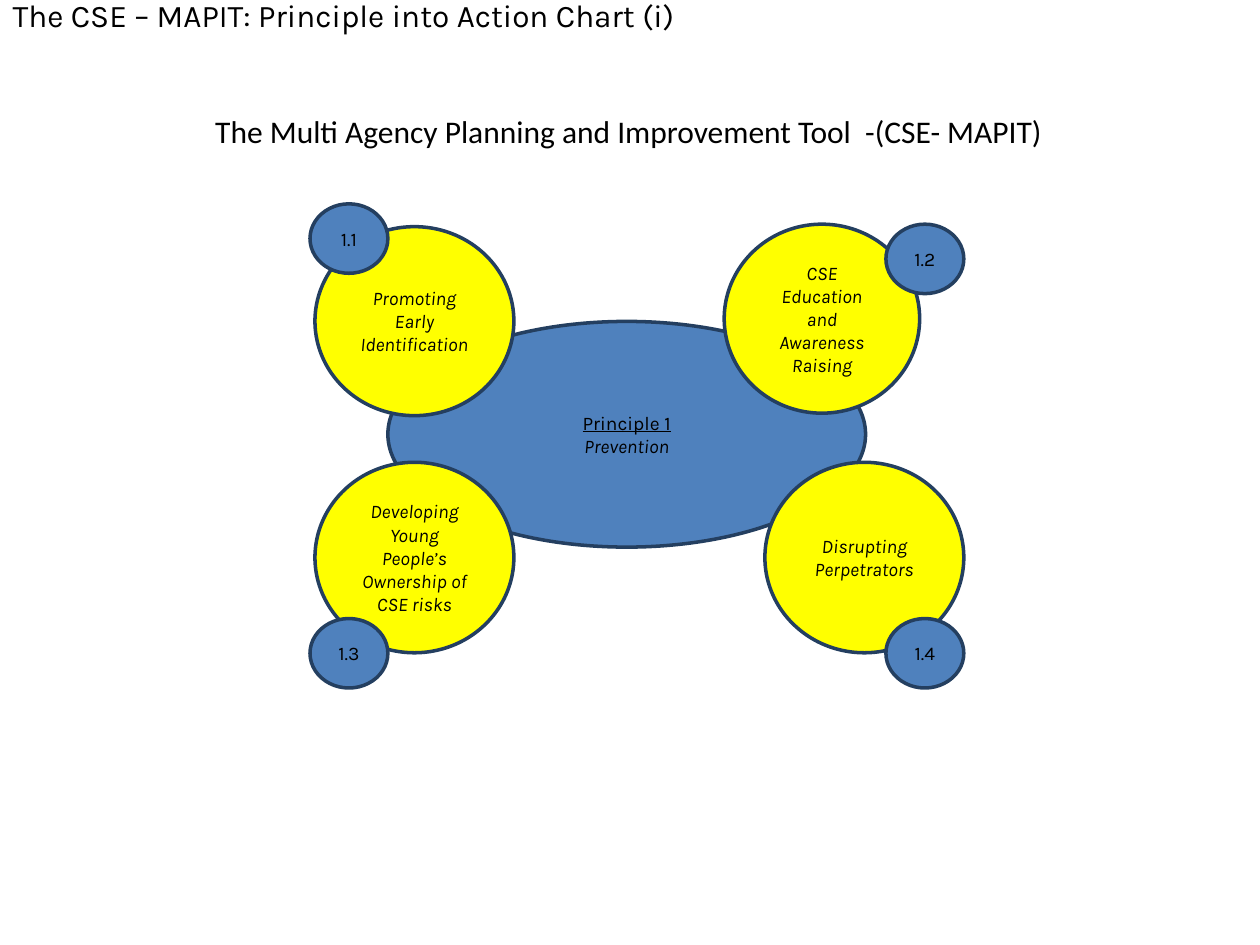
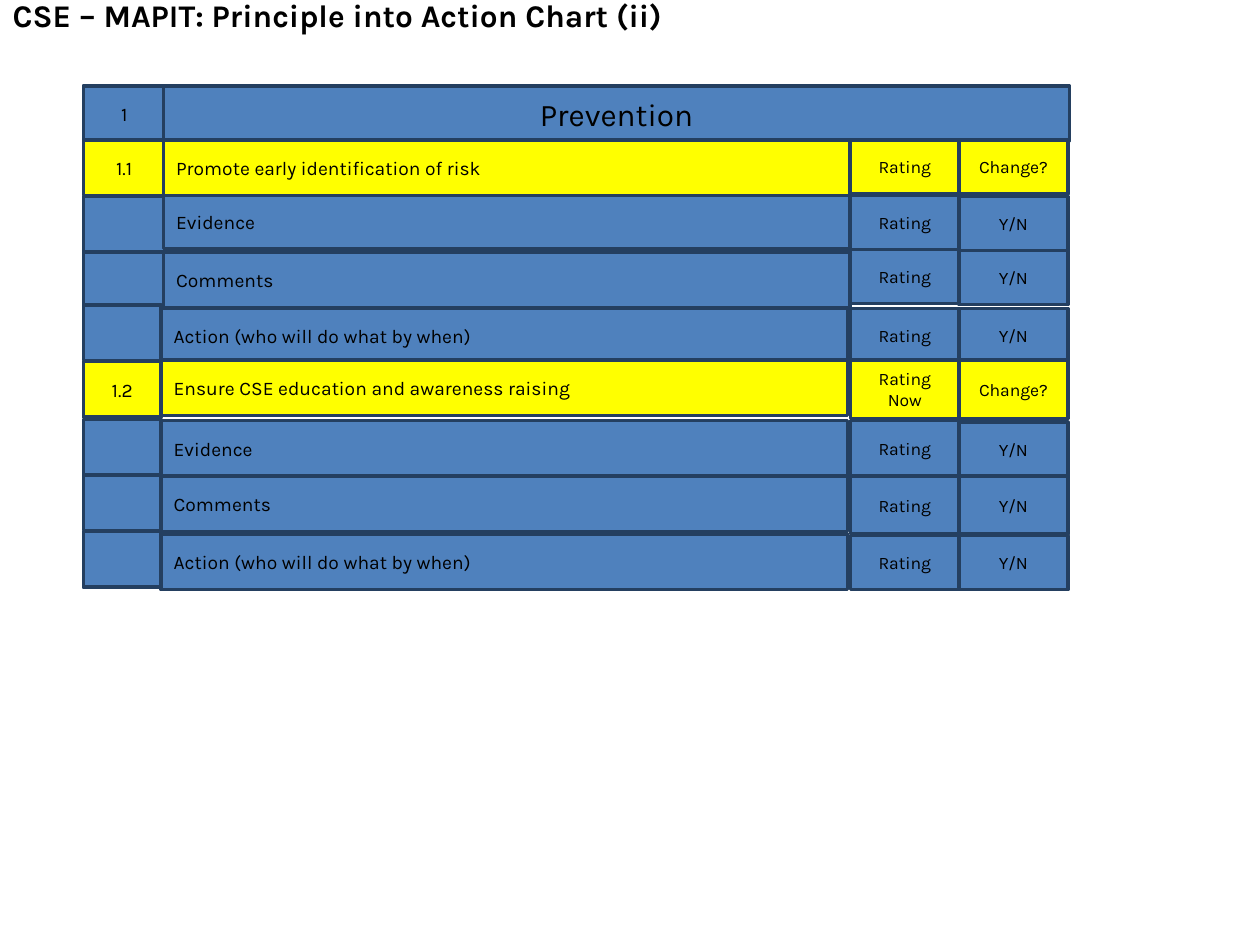
"""Builds the two Principle into Action chart slides."""
from pptx import Presentation
from pptx.dml.color import RGBColor
from pptx.enum.shapes import MSO_SHAPE as SHAPE
from pptx.enum.text import MSO_ANCHOR as ANCHOR, MSO_AUTO_SIZE as FIT, PP_ALIGN as ALIGN
from pptx.util import Cm, Pt

BLUE = RGBColor(0x4F, 0x81, 0xBD)
NAVY = RGBColor(0x24, 0x3F, 0x60)
YELLOW = RGBColor(0xFF, 0xFF, 0x00)
BLACK = RGBColor(0, 0, 0)

TOPICS = [
    ("Promoting Early Identification", (6.35, 4.57, 4.01, 3.81)),
    ("Developing Young People’s Ownership of CSE risks", (6.35, 9.32, 4.01, 3.84)),
    ("CSE Education and Awareness Raising", (14.6, 4.52, 3.94, 3.81)),
    ("Disrupting Perpetrators", (15.42, 9.32, 4.01, 3.84)),
]
BADGES = [("1.1", 6.25, 4.11), ("1.2", 17.86, 4.52), ("1.3", 6.25, 12.47), ("1.4", 17.86, 12.47)]

ROW_H = 1.12
NUMBER_X, RATING_X, CHANGE_X = 1.68, 17.15, 19.33
TEXT_W, RATING_W, CHANGE_W = 13.84, 2.18, 2.2
UPPER, LOWER = (3.3, 1.65), (3.25, 1.57)
# Each row: number, text, rating, change, (text left, number width), cell tops, text and rating heights.
ROWS = [
    ("1.1", "Promote early identification of risk", "Rating", "Change?", UPPER,
     (2.82, 2.82, 2.82, 2.82), 1.12, 1.09),
    ("", "Evidence", "Rating", "Y/N", UPPER, (3.96, 3.94, 3.94, 3.96), 1.07, 1.09),
    ("", "Comments", "Rating", "Y/N", UPPER, (5.08, 5.08, 5.03, 5.05), 1.12, 1.09),
    ("", "Action (who will do what by when)", "Rating", "Y/N", LOWER,
     (6.15, 6.22, 6.22, 6.22), 1.12, 1.09),
    ("1.2", "Ensure CSE education and awareness raising", "Rating Now", "Change?", LOWER,
     (7.29, 7.26, 7.26, 7.26), 1.12, 1.18),
    ("", "Evidence", "Rating", "Y/N", LOWER, (8.46, 8.48, 8.48, 8.51), 1.12, 1.12),
    ("", "Comments", "Rating", "Y/N", LOWER, (9.58, 9.6, 9.6, 9.6), 1.12, 1.17),
    ("", "Action (who will do what by when)", "Rating", "Y/N", LOWER,
     (10.72, 10.77, 10.8, 10.8), 1.12, 1.09),
]


class Deck:
    """Holds the shared style and the current slide."""

    def __init__(self):
        self.prs = Presentation()
        self.prs.slide_width, self.prs.slide_height = Cm(25.4), Cm(19.05)
        self.slide = None

    def run(self, p, text, size, font="Karla", bold=False, italic=False, underline=False):
        r = p.add_run()
        r.text = text
        f = r.font
        f.name, f.size, f.color.rgb = font, Pt(size), BLACK
        f.bold, f.italic, f.underline = bold, italic, underline

    def new_slide(self, title, bold=False):
        self.slide = self.prs.slides.add_slide(self.prs.slide_layouts[5])
        sp = self.slide.shapes.title
        sp.left, sp.top, sp.width, sp.height = Cm(0), Cm(0), Cm(25.4), Cm(1.27)
        tf = sp.text_frame
        tf.word_wrap, tf.auto_size = True, FIT.NONE
        tf.vertical_anchor = ANCHOR.MIDDLE
        tf.margin_top, tf.margin_bottom = Cm(0), Cm(0.66)
        p = tf.paragraphs[0]
        p.alignment = ALIGN.LEFT
        self.run(p, title, 18, bold=bold)

    def text(self, text, at, size, font):
        tf = self.slide.shapes.add_textbox(*map(Cm, at)).text_frame
        tf.word_wrap = True
        self.run(tf.paragraphs[0], text, size, font)

    def shape(self, kind, at, fill, text="", size=11, align=ALIGN.CENTER, **style):
        sp = self.slide.shapes.add_shape(kind, *map(Cm, at))
        sp.shadow.inherit = False
        sp.fill.solid()
        sp.fill.fore_color.rgb = fill
        sp.line.color.rgb, sp.line.width = NAVY, Pt(2)
        tf = sp.text_frame
        tf.word_wrap, tf.vertical_anchor = True, ANCHOR.MIDDLE
        p = tf.paragraphs[0]
        p.alignment = align
        if text:
            self.run(p, text, size, **style)
        return tf

    def oval(self, at, fill, text, **style):
        return self.shape(SHAPE.OVAL, at, fill, text, **style)

    def cell(self, at, fill, text, **style):
        return self.shape(SHAPE.RECTANGLE, at, fill, text, **style)


def principle_slide(deck):
    deck.new_slide("The CSE – MAPIT: Principle into Action Chart (i)")
    deck.text("The Multi Agency Planning and Improvement Tool  -(CSE- MAPIT)",
              (4.09, 2.13, 18.01, 1.02), 18, "Calibri")
    tf = deck.oval((7.82, 6.48, 9.63, 4.55), BLUE, "Principle 1", underline=True)
    p = tf.add_paragraph()
    p.alignment = ALIGN.CENTER
    deck.run(p, "Prevention", 11, italic=True)
    for topic, at in TOPICS:
        deck.oval(at, YELLOW, topic, italic=True)
    for number, x, y in BADGES:
        deck.oval((x, y, 1.57, 1.4), BLUE, number)


def rating_slide(deck):
    deck.new_slide("CSE – MAPIT: Principle into Action Chart (ii)", bold=True)
    deck.cell((NUMBER_X, 1.73, 1.65, ROW_H), BLUE, "1")
    deck.cell((3.3, 1.73, 18.26, ROW_H), BLUE, "Prevention", size=18)
    for number, text, rating, change, (text_x, number_w), tops, text_h, rating_h in ROWS:
        fill = YELLOW if number else BLUE
        number_y, text_y, rating_y, change_y = tops
        deck.cell((NUMBER_X, number_y, number_w, ROW_H), fill, number)
        deck.cell((text_x, text_y, TEXT_W, text_h), fill, text, align=ALIGN.LEFT)
        deck.cell((RATING_X, rating_y, RATING_W, rating_h), fill, rating, size=10)
        deck.cell((CHANGE_X, change_y, CHANGE_W, rating_h), fill, change, size=10)


def main():
    deck = Deck()
    principle_slide(deck)
    rating_slide(deck)
    deck.prs.save("out.pptx")


if __name__ == "__main__":
    main()
